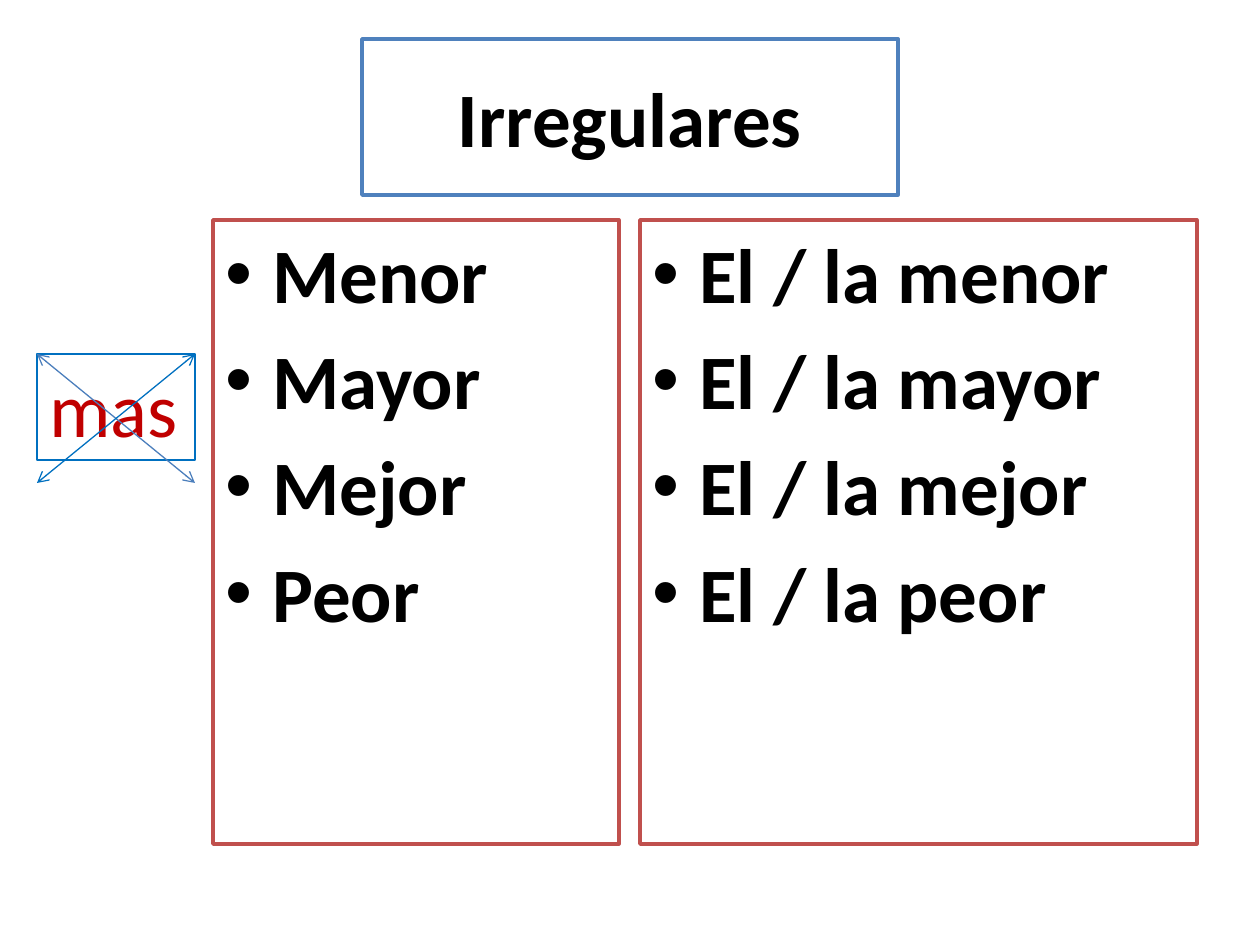
from lxml.etree import SubElement
from pptx import Presentation
from pptx.dml.color import RGBColor
from pptx.enum.shapes import MSO_CONNECTOR, MSO_SHAPE
from pptx.enum.text import MSO_ANCHOR as Anchor, PP_ALIGN as Align
from pptx.oxml.ns import qn
from pptx.util import Pt

PX = 914400 // 126
WHITE = RGBColor(0xFF, 0xFF, 0xFF)
BLACK = RGBColor(0, 0, 0)
BLUE = RGBColor(0x4F, 0x81, 0xBD)
RED = RGBColor(0xC0, 0x50, 0x4D)
DARK_RED = RGBColor(0xC0, 0, 0)
BRIGHT_BLUE = RGBColor(0, 0x70, 0xC0)
STEEL_BLUE = RGBColor(0x4B, 0x7E, 0xBC)

TITLE = "Irregulares"
TITLE_BOX = (362, 39, 536, 156)
ADJECTIVES = ["Menor", "Mayor", "Mejor", "Peor"]
COLUMNS = [
    (213, 406, ADJECTIVES),
    (640, 557, [f"El / la {word.lower()}" for word in ADJECTIVES]),
]
COLUMN_TOP, COLUMN_HEIGHT = 220, 624
CROSSED_WORD = "mas"
WORD_BOX = (37, 354, 158, 106)
CROSS_HEIGHT = 129
INDENT = 47


def add_box(slide, box, lines, line_color, line_width, text_color=BLACK,
            bold=True, fill=WHITE, anchor=Anchor.TOP, align=Align.LEFT):
    """Add an outlined rectangle holding one paragraph per line of text."""
    shape = slide.shapes.add_shape(MSO_SHAPE.RECTANGLE, *(n * PX for n in box))
    shape.shadow.inherit = False
    if fill is None:
        shape.fill.background()
    else:
        shape.fill.solid()
        shape.fill.fore_color.rgb = fill
    shape.line.color.rgb = line_color
    shape.line.width = Pt(line_width)
    text_frame = shape.text_frame
    text_frame.word_wrap = True
    text_frame.vertical_anchor = anchor
    text_frame.text = "\n".join(lines)
    for paragraph in text_frame.paragraphs:
        paragraph.alignment = align
        for run in paragraph.runs:
            run.font.name = "Calibri"
            run.font.size = Pt(44)
            run.font.bold = bold
            run.font.color.rgb = text_color
    return shape


def add_bullets(shape):
    """Give each paragraph a hanging bullet and space between items."""
    for index, paragraph in enumerate(shape.text_frame.paragraphs):
        if index:
            paragraph.space_before = Pt(8)
        properties = paragraph._p.get_or_add_pPr()
        properties.set("marL", str(INDENT * PX))
        properties.set("indent", str(-INDENT * PX))
        SubElement(properties, qn("a:buFont"), typeface="Arial")
        SubElement(properties, qn("a:buChar"), char="•")


def add_double_arrow(slide, start, end, color):
    """Add a thin straight line with an open arrowhead at both ends."""
    connector = slide.shapes.add_connector(
        MSO_CONNECTOR.STRAIGHT, *(n * PX for n in start + end))
    connector.line.color.rgb = color
    connector.line.width = Pt(0.75)
    line = connector.line._get_or_add_ln()
    for tag in ("a:headEnd", "a:tailEnd"):
        SubElement(line, qn(tag), type="arrow")
    SubElement(connector._element.spPr, qn("a:effectLst"))


def main():
    """Build the slide and save it."""
    presentation = Presentation()
    presentation.slide_width = 1260 * PX
    presentation.slide_height = 945 * PX
    slide = presentation.slides.add_slide(presentation.slide_layouts[6])

    add_box(slide, TITLE_BOX, [TITLE], BLUE, 2,
            anchor=Anchor.MIDDLE, align=Align.CENTER)
    for left, width, lines in COLUMNS:
        box = (left, COLUMN_TOP, width, COLUMN_HEIGHT)
        add_bullets(add_box(slide, box, lines, RED, 2))

    add_box(slide, WORD_BOX, [CROSSED_WORD], BRIGHT_BLUE, 0.75,
            text_color=DARK_RED, bold=False, fill=None)
    left, top, width, _ = WORD_BOX
    right, bottom = left + width, top + CROSS_HEIGHT
    add_double_arrow(slide, (left, top), (right, bottom), STEEL_BLUE)
    add_double_arrow(slide, (right, top), (left, bottom), BRIGHT_BLUE)

    presentation.save("out.pptx")


if __name__ == "__main__":
    main()
